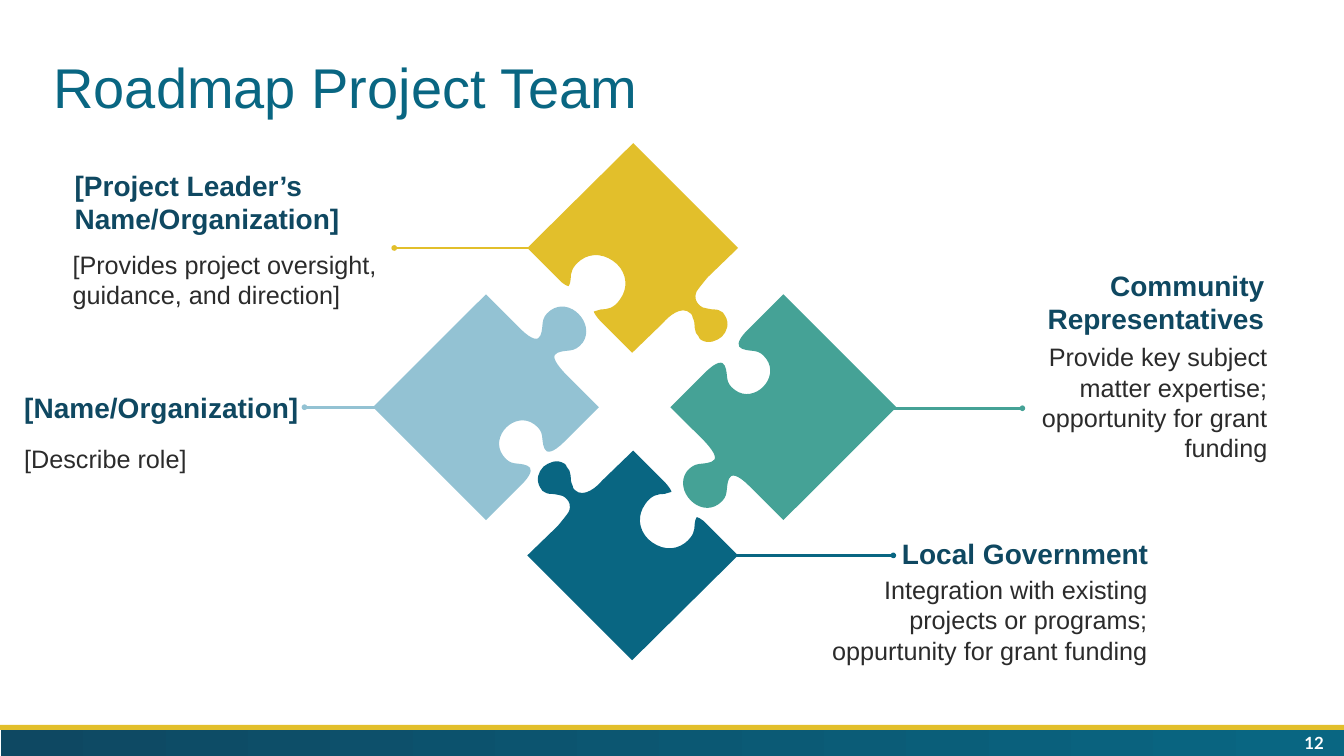
from pptx import Presentation
from pptx.dml.color import RGBColor
from pptx.enum.shapes import MSO_CONNECTOR, MSO_SHAPE
from pptx.enum.text import MSO_ANCHOR, PP_ALIGN
from pptx.oxml import parse_xml
from pptx.oxml.ns import nsdecls
from pptx.util import Inches, Pt

WIDE, HIGH = 13.33, 7.5
COLS, ROWS = 133.3, 75

HUES = {
    "gold": "E2BF2B", "teal": "096682", "navy": "0E4862", "head": "0F4861",
    "sky": "93C2D3", "green": "45A296", "ink": "2B2B2B", "white": "FFFFFF",
}

TOP = [
    (59.7, 32), (59.1, 31.4, 58.9, 31, 58.9, 30.9),
    (59.1, 30.8, 59.4, 30.8, 59.6, 30.7), (60.2, 30.7, 60.9, 30.6, 61.5, 29.7),
    (62.3, 28.6, 62.2, 27.2, 61.2, 26.2), (60.1, 25.2, 58.7, 25, 57.6, 25.8),
    (56.7, 26.5, 56.6, 27.1, 56.6, 27.7), (56.6, 28, 56.5, 28.2, 56.4, 28.4),
    (56.3, 28.4, 56.1, 28.3, 55.7, 28), (52.3, 24.6), (62.8, 14.2), (73.2, 24.6),
    (70.2, 27.5), (69.7, 28.1, 69.3, 28.6, 69.1, 28.9),
    (68.8, 29.6, 69.1, 30, 69.3, 30.2), (69.4, 30.3, 69.5, 30.4, 69.7, 30.5),
    (70.1, 30.6, 70.5, 30.7, 70.8, 30.7), (71.2, 30.7, 71.4, 30.8, 71.7, 31),
    (71.8, 31.1, 71.8, 31.2, 71.9, 31.3), (72.4, 32.1, 72.1, 32.9, 71.6, 33.4),
    (71.1, 33.8, 70.3, 34.2, 69.5, 33.7), (69.4, 33.6, 69.3, 33.5, 69.3, 33.4),
    (69, 33.2, 69, 32.9, 68.9, 32.5), (68.9, 32.2, 68.9, 31.9, 68.7, 31.5),
    (68.7, 31.3, 68.6, 31.2, 68.5, 31.1), (67.6, 30.2, 66.2, 31.5, 65.8, 32),
    (62.7, 35),
]
RIGHT = [
    (72.9, 38.7), (71.8, 37.9, 72.3, 37.3, 71.9, 36.3),
    (71.7, 35.8, 71.1, 35.8, 69.9, 37), (66.5, 40.4), (69.9, 43.8),
    (71.1, 45.1, 71.1, 45.6, 70.6, 45.8), (69.6, 46.2, 69, 45.7, 68.1, 46.8),
    (66.8, 48.7, 69.4, 51.4, 71.3, 50), (72.4, 49.2, 71.9, 48.5, 72.3, 47.5),
    (72.5, 47, 73.1, 47, 74.3, 48.2), (77.7, 51.6), (88.9, 40.4), (77.7, 29.2),
    (73.9, 33), (73.1, 33.9, 73.1, 34.4, 73.6, 34.6),
    (74.6, 35, 75.2, 34.5, 76, 35.6), (77.4, 37.5, 74.8, 40.1, 72.9, 38.7),
]


def hue(name):
    return RGBColor.from_string(HUES[name])


def turn(steps, mid):
    return [tuple(2 * mid[k % 2] - n for k, n in enumerate(step))
            for step in steps]


class Deck:
    def __init__(self):
        self.show = Presentation()
        self.show.slide_width = Inches(WIDE)
        self.show.slide_height = Inches(HIGH)
        self.slide = self.show.slides.add_slide(self.show.slide_layouts[6])
        self.shapes = self.slide.shapes
        self.font = "Arial"

    def col(self, n):
        return Inches(n * WIDE / COLS)

    def row(self, n):
        return Inches(n * HIGH / ROWS)

    def area(self, x, y, w, h):
        return self.col(x), self.row(y), self.col(w), self.row(h)

    def band(self, box, *tints):
        bar = self.shapes.add_shape(MSO_SHAPE.RECTANGLE, *self.area(*box))
        bar.shadow.inherit = False
        bar.line.fill.background()
        if len(tints) == 1:
            bar.fill.solid()
            bar.fill.fore_color.rgb = hue(tints[0])
            return
        bar.fill.gradient()
        bar.fill.gradient_angle = 0
        for stop, tint, place in zip(bar.fill.gradient_stops, tints, (0, 0.98)):
            stop.color.rgb = hue(tint)
            stop.position = place

    def piece(self, steps, tint):
        spots = [(self.col(x), self.row(y)) for step in steps
                 for x, y in zip(step[::2], step[1::2])]
        form = self.shapes.build_freeform(*spots[0])
        form.add_line_segments(spots[1:], close=True)
        part = form.convert_to_shape()
        part.shadow.inherit = False
        part.fill.solid()
        part.fill.fore_color.rgb = hue(tint)
        part.line.fill.background()
        self.bend(part, steps)

    def bend(self, part, steps):
        marks = iter(part._element.xpath(".//a:path/a:lnTo"))
        for step in steps[1:]:
            group = [next(marks) for _ in step[::2]]
            if len(group) == 1:
                continue
            curve = parse_xml(f'<a:cubicBezTo {nsdecls("a")}/>')
            group[0].addprevious(curve)
            for mark in group:
                curve.append(mark[0])
                mark.getparent().remove(mark)

    def link(self, start, end, y, tint):
        wire = self.shapes.add_connector(
            MSO_CONNECTOR.STRAIGHT, self.col(start), self.row(y),
            self.col(end), self.row(y))
        wire.line.color.rgb = hue(tint)
        wire.line.width = Pt(2)
        wire.line._get_or_add_ln().append(parse_xml(
            f'<a:tailEnd {nsdecls("a")} type="oval" w="sm" len="sm"/>'))
        wire._element.spPr.append(parse_xml(f'<a:effectLst {nsdecls("a")}/>'))

    def text(self, box, words, size, tint, bold=False, right=False,
             mid=False, pad=(0.7, 0.4), space=1.0, font=None):
        frame = self.shapes.add_textbox(*self.area(*box)).text_frame
        frame.word_wrap = True
        frame.margin_left = frame.margin_right = self.col(pad[0])
        frame.margin_top = frame.margin_bottom = self.row(pad[1])
        frame.vertical_anchor = MSO_ANCHOR.MIDDLE if mid else MSO_ANCHOR.TOP
        para = frame.paragraphs[0]
        para.alignment = PP_ALIGN.RIGHT if right else PP_ALIGN.LEFT
        para.line_spacing = space
        run = para.add_run()
        run.text = words
        run.font.name = font or self.font
        run.font.size = Pt(size)
        run.font.bold = bold
        run.font.color.rgb = hue(tint)

    def role(self, head, box, note, under, right=False):
        self.text(box, head, 20, "head", bold=True, right=right)
        self.text(under, note, 18, "ink", right=right)

    def save(self):
        self.show.save("out.pptx")


def main():
    deck = Deck()
    deck.band((0.1, 72.4, 133.3, 2.8), "navy", "teal")
    deck.band((0, 71.9, 133.3, 0.5), "gold")
    deck.text((4.3, 5.3, 125.1, 7.3), "Roadmap Project Team", 40, "teal",
              mid=True, pad=(1, 0.5), space=0.9)

    deck.piece(RIGHT, "green")
    deck.piece(TOP, "gold")
    deck.piece(turn(RIGHT, (62.95, 40.4)), "sky")
    deck.piece(turn(TOP, (62.75, 39.85)), "teal")

    for wire in ((43.5, 30.2, 40.4, "sky"), (69.4, 88.6, 55.1, "teal"),
                 (83.8, 101.4, 40.5, "green"), (55.9, 39.1, 24.6, "gold")):
        deck.link(*wire)

    deck.role("[Project Leader’s Name/Organization]", (6.7, 16.3, 45.6, 7.7),
              "[Provides project oversight, guidance, and direction]",
              (6.5, 24.3, 33.6, 7.7))
    deck.role("[Name/Organization]", (1.7, 38.3, 29.8, 7.7),
              "[Describe role]", (1.7, 43.6, 30.2, 7.7))
    deck.role("Community Representatives", (91, 26.2, 35.1, 7.7),
              "Provide key subject matter expertise; opportunity for grant funding",
              (98.1, 33.5, 28.3, 12.6), right=True)
    deck.role("Local Government", (86.3, 52.8, 28.3, 9.4),
              "Integration with existing projects or programs; "
              "oppurtunity for grant funding",
              (78.6, 56.6, 35.9, 7.7), right=True)
    deck.text((102.3, 72.4, 30, 2.6), "12", 12, "white", bold=True, right=True,
              mid=True, pad=(1, 0), font="Lato")
    deck.save()


if __name__ == "__main__":
    main()
